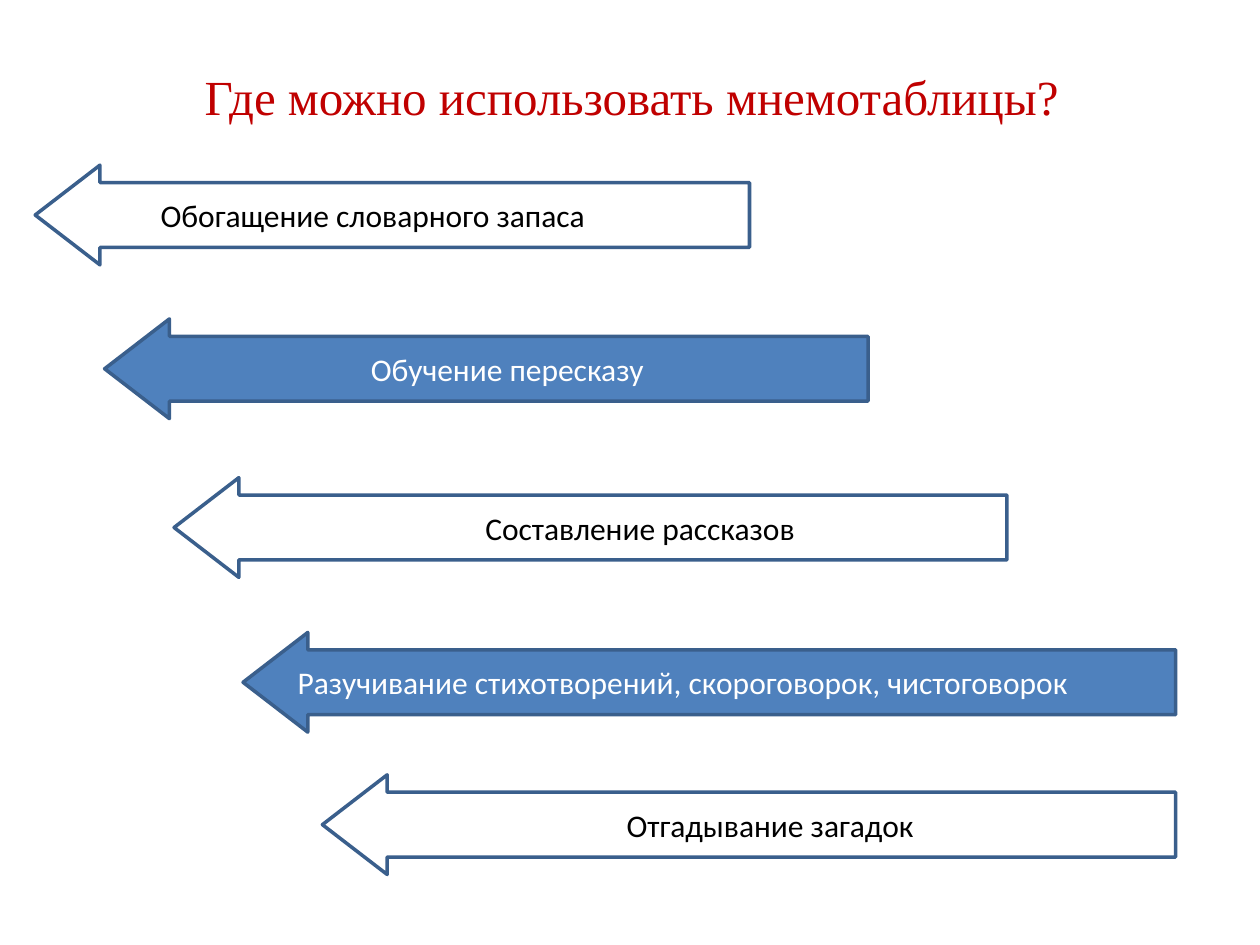
from pptx import Presentation
from pptx import util as u
from pptx.dml.color import RGBColor
from pptx.enum import shapes, text

WHITE, BLACK, BLUE, NAVY, RED = "FFFFFF", "000000", "4F81BD", "3A5F8C", "C00000"
LEFT, CENTER = text.PP_ALIGN.LEFT, text.PP_ALIGN.CENTER

ARROW_HEIGHT = 2.01
# left, top, width (cm), filled, alignment, indent (cm), wording
ARROWS = [
    (0.71, 3.33, 14.4, False, LEFT, 1.43, "Обогащение словарного запаса"),
    (2.11, 6.43, 15.39, True, CENTER, 0, "Обучение пересказу"),
    (3.51, 9.63, 16.79, False, CENTER, 1.15, "Составление рассказов"),
    (4.9, 12.75, 18.8, True, LEFT, 0,
     "Разучивание стихотворений, скороговорок, чистоговорок"),
    (6.5, 15.62, 17.2, False, CENTER, 0, "Отгадывание загадок"),
]


def color(value):
    return RGBColor.from_string(value)


def write(shape, wording, font, size, ink, align):
    frame = shape.text_frame
    frame.word_wrap = True
    frame.vertical_anchor = text.MSO_ANCHOR.MIDDLE
    frame.text = wording
    para = frame.paragraphs[0]
    para.alignment = align
    span = para.runs[0]
    span.font.name = font
    span.font.size = u.Pt(size)
    span.font.color.rgb = color(ink)
    return para


def add_title(page, left, top, width, height):
    box = page.shapes.add_textbox(*map(u.Cm, (left, top, width, height)))
    write(box, "Где можно использовать мнемотаблицы?",
          "Times New Roman", 28, RED, CENTER)
    # Lift the line above the first arrow
    box.text_frame.margin_bottom = u.Cm(1.25)


def add_arrow(page, left, top, width, filled, align, indent, wording):
    arrow = page.shapes.add_shape(shapes.MSO_SHAPE.LEFT_ARROW,
                                  *map(u.Cm, (left, top, width, ARROW_HEIGHT)))
    arrow.adjustments[0] = arrow.adjustments[1] = 0.65
    arrow.shadow.inherit = False
    arrow.fill.solid()
    arrow.fill.fore_color.rgb = color(BLUE if filled else WHITE)
    arrow.line.color.rgb = color(NAVY)
    arrow.line.width = u.Pt(2)
    para = write(arrow, wording, "Calibri", 18, WHITE if filled else BLACK, align)
    if indent:
        properties = para._p.get_or_add_pPr()
        properties.set("marL", str(u.Cm(indent)))
        properties.set("indent", "0")


def main():
    deck = Presentation()
    deck.slide_width, deck.slide_height = u.Cm(25.4), u.Cm(19.05)
    page = deck.slides.add_slide(deck.slide_layouts[6])

    # Heading
    add_title(page, 1.3, 0.91, 22.86, 3.18)

    # Staircase of arrows
    for arrow in ARROWS:
        add_arrow(page, *arrow)

    deck.save("out.pptx")


if __name__ == "__main__":
    main()
